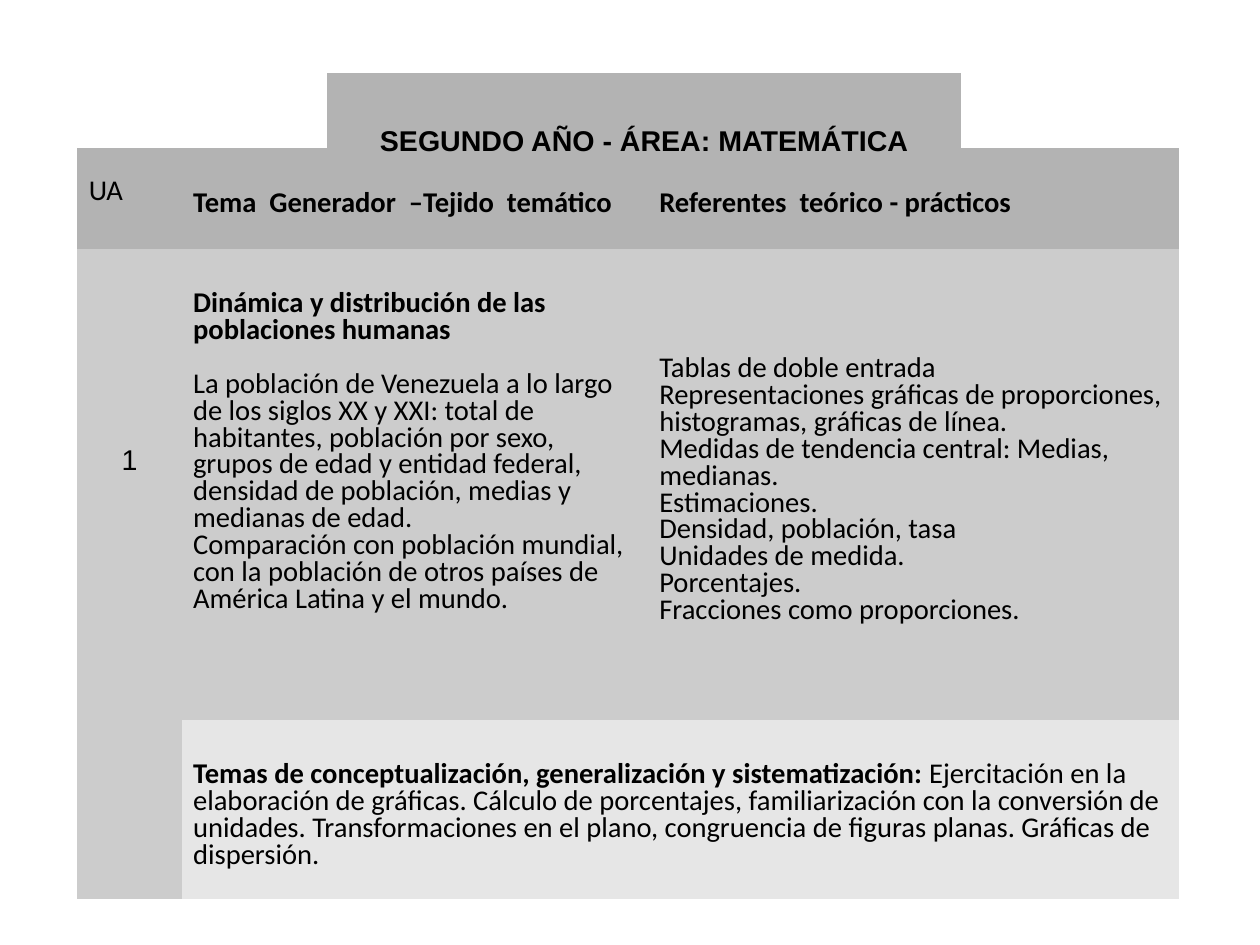
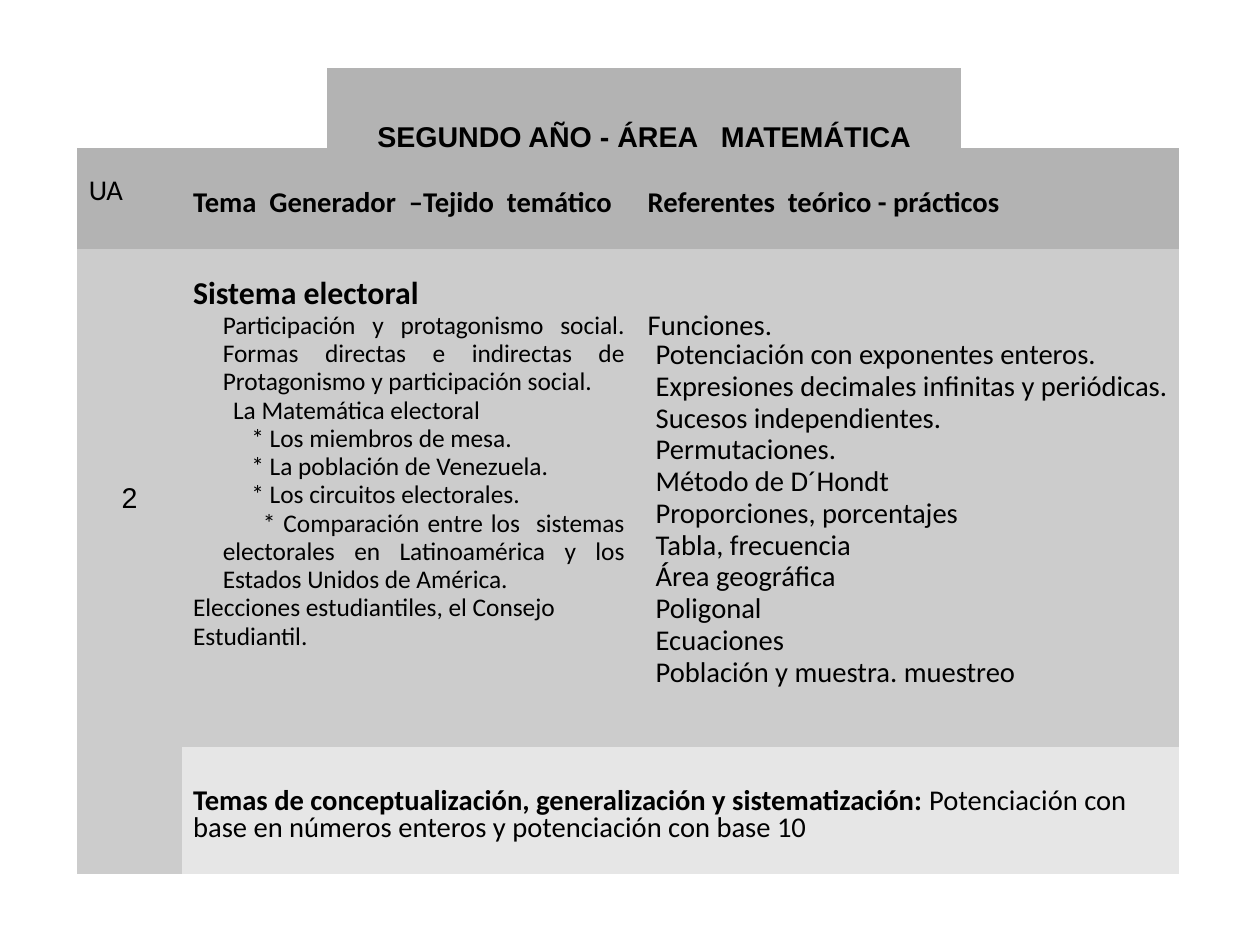
"""Build two syllabus slides for the mathematics area."""
from dataclasses import dataclass

from pptx import Presentation
from pptx.dml.color import RGBColor
from pptx.enum.text import PP_ALIGN
from pptx.util import Cm, Inches, Pt

LEFT, CENTER, JUSTIFY = PP_ALIGN.LEFT, PP_ALIGN.CENTER, PP_ALIGN.JUSTIFY
PLAIN_TABLE = "{2D5ABB26-0587-4C30-8999-92F81FD0307C}"


@dataclass(frozen=True)
class Theme:
    """Colours, fonts, type sizes in points and shared lengths in inches."""
    ink: str = "000000"
    header: str = "B3B3B3"
    body: str = "CCCCCC"
    summary: str = "E6E6E6"
    text_font: str = "Calibri"
    title_font: str = "Arial"
    heading: int = 20
    text: int = 18
    small: int = 16
    tight: float = 0.58
    compact: float = 0.77
    relaxed: float = 0.91
    side_margin: float = 0.1
    bottom_margin: float = 0.05


THEME = Theme()


def write(frame, text, lead="", font=THEME.text_font, size=THEME.text, bold=False,
          align=LEFT, spacing=THEME.compact, left=0, first=0, after=0):
    """Add one paragraph, with an optional bold lead, to a text frame."""
    paragraph = frame.paragraphs[0]
    if paragraph.runs:
        paragraph = frame.add_paragraph()
    paragraph.alignment = align
    paragraph.line_spacing = spacing
    paragraph.space_before = Pt(0)
    paragraph.space_after = Pt(after)
    properties = paragraph._p.get_or_add_pPr()
    properties.set("marL", str(Inches(left)))
    properties.set("indent", str(Inches(first)))
    for words, weight in ((lead, True), (text, bold)):
        if words:
            run = paragraph.add_run()
            run.text = words
            run.font.name = font
            run.font.size = Pt(size)
            run.font.bold = weight
            run.font.color.rgb = RGBColor.from_string(THEME.ink)


class Deck:
    """Holds the presentation and current slide; lengths are percent of slide size."""

    def __init__(self, width, height):
        """Start a presentation of the given size in centimetres."""
        self.presentation = Presentation()
        self.presentation.slide_width = Cm(width)
        self.presentation.slide_height = Cm(height)
        self.slide = None

    def across(self, share):
        """Turn a percentage of the width into a length."""
        return int(self.presentation.slide_width * share / 100)

    def down(self, share):
        """Turn a percentage of the height into a length."""
        return int(self.presentation.slide_height * share / 100)

    def add_slide(self):
        """Start a blank slide."""
        self.slide = self.presentation.slides.add_slide(self.presentation.slide_layouts[6])

    def table(self, left, top, columns, rows):
        """Add an unstyled table with the given column and row shares."""
        shape = self.slide.shapes.add_table(
            len(rows), len(columns), self.across(left), self.down(top),
            self.across(sum(columns)), self.down(sum(rows)))
        table = shape.table
        table.first_row = table.horz_banding = False
        shape.element.xpath(".//a:tableStyleId")[0].text = PLAIN_TABLE
        for column, share in zip(table.columns, columns):
            column.width = self.across(share)
        for row, share in zip(table.rows, rows):
            row.height = self.down(share)
        return table

    def cell(self, cell, fill, top, paragraphs, **shared):
        """Fill a cell with colour and (text, format) paragraphs below a top margin."""
        cell.fill.solid()
        cell.fill.fore_color.rgb = RGBColor.from_string(fill)
        cell.margin_left = cell.margin_right = Inches(THEME.side_margin)
        cell.margin_top = Inches(top)
        cell.margin_bottom = Inches(THEME.bottom_margin)
        for text, style in paragraphs:
            write(cell.text_frame, text, **{**shared, **style})

    def title(self, text, top):
        """Add the title band."""
        band = self.table(25.95, top, [50.36], [9.55])
        self.cell(band.cell(0, 0), THEME.header, 0.56, [(text, {})], bold=True,
                  font=THEME.title_font, align=CENTER, spacing=THEME.tight)

    def unit(self, number, number_top, theme_width, heights, topics, references, summary):
        """Add the table of one learning unit."""
        number_width, total_width = 8.28, 87.46
        table = self.table(
            6.14, 15.7,
            [number_width, theme_width, total_width - number_width - theme_width],
            [10.64, *heights])
        headers = (
            ("UA", 0.25, {"spacing": 0.83}),
            ("Tema  Generador  –Tejido  temático", 0.37, {"bold": True}),
            ("Referentes  teórico - prácticos", 0.37, {"bold": True}),
        )
        for index, (text, top, style) in enumerate(headers):
            self.cell(table.cell(0, index), THEME.header, top, [(text, style)])
        table.cell(1, 0).merge(table.cell(2, 0))
        table.cell(2, 1).merge(table.cell(2, 2))
        self.cell(table.cell(1, 0), THEME.body, number_top, [(number, {})],
                  font=THEME.title_font, align=CENTER, spacing=THEME.tight)
        for index, (top, paragraphs, shared) in enumerate((topics, references), 1):
            self.cell(table.cell(1, index), THEME.body, top, paragraphs, **shared)
        lead = "Temas de conceptualización, generalización y sistematización: "
        self.cell(table.cell(2, 1), THEME.summary, 0.37, [(summary, {"lead": lead})])


def plain(*texts):
    """Pair each text with an empty format."""
    return [(text, {}) for text in texts]


def population_slide(deck):
    """Build the unit on human populations."""
    topics = [
        ("Dinámica y distribución de las poblaciones humanas", {"bold": True, "after": 17}),
        *plain(
            "La población de Venezuela a lo largo de los siglos XX y XXI: total de "
            "habitantes, población por sexo, grupos de edad y entidad federal, densidad "
            "de población, medias y medianas de edad.",
            "Comparación con población mundial, con la población de otros países de "
            "América Latina y el mundo."),
    ]
    references = plain(
        "Tablas de doble entrada",
        "Representaciones gráficas de proporciones, histogramas, gráficas de línea.",
        "Medidas de tendencia central: Medias, medianas.",
        "Estimaciones.",
        "Densidad, población, tasa",
        "Unidades de medida.",
        "Porcentajes.",
        "Fracciones como proporciones.")
    deck.add_slide()
    deck.unit("1", 1.81, 37, (49.82, 18.98), (0.37, topics, {}), (0.94, references, {}),
              "Ejercitación en la elaboración de gráficas. Cálculo de porcentajes, "
              "familiarización con la conversión de unidades. Transformaciones en el plano, "
              "congruencia de figuras planas. Gráficas de dispersión.")
    deck.title("SEGUNDO AÑO - ÁREA: MATEMÁTICA", 7.72)


def election_slide(deck):
    """Build the unit on the electoral system."""
    topics = [
        ("Sistema electoral", {"size": THEME.heading, "bold": True}),
        ("Participación y protagonismo social. Formas directas e indirectas de "
         "Protagonismo y participación social.", {"left": 0.26}),
        ("La Matemática electoral", {"left": 0.35}),
        *[(text, {"left": 0.51}) for text in (
            "* Los miembros de mesa.",
            "* La población de Venezuela.",
            "* Los circuitos electorales.")],
        ("* Comparación entre los  sistemas electorales en Latinoamérica y los "
         "Estados Unidos de América.", {"left": 0.26, "first": 0.35}),
        ("Elecciones estudiantiles, el Consejo Estudiantil.", {"align": LEFT}),
    ]
    references = [
        ("Funciones.", {"left": 0, "spacing": 0.63}),
        *plain(
            "Potenciación con exponentes enteros.",
            "Expresiones decimales infinitas y periódicas.",
            "Sucesos independientes.",
            "Permutaciones.",
            "Método de D´Hondt",
            "Proporciones, porcentajes",
            "Tabla, frecuencia",
            "Área geográfica",
            "Poligonal",
            "Ecuaciones",
            "Población y muestra. muestreo"),
    ]
    topic_style = {"size": THEME.small, "align": JUSTIFY, "spacing": THEME.relaxed}
    reference_style = {"left": 0.07, "spacing": THEME.relaxed}
    deck.add_slide()
    deck.unit("2", 2.14, 36.08, (52.72, 13.42), (0.24, topics, topic_style),
              (0.6, references, reference_style),
              "Potenciación con base en números enteros y potenciación con base 10")
    deck.title("SEGUNDO AÑO - ÁREA   MATEMÁTICA", 7.23)


def main():
    """Build and save the presentation."""
    deck = Deck(28, 21)
    population_slide(deck)
    election_slide(deck)
    deck.presentation.save("out.pptx")


if __name__ == "__main__":
    main()
